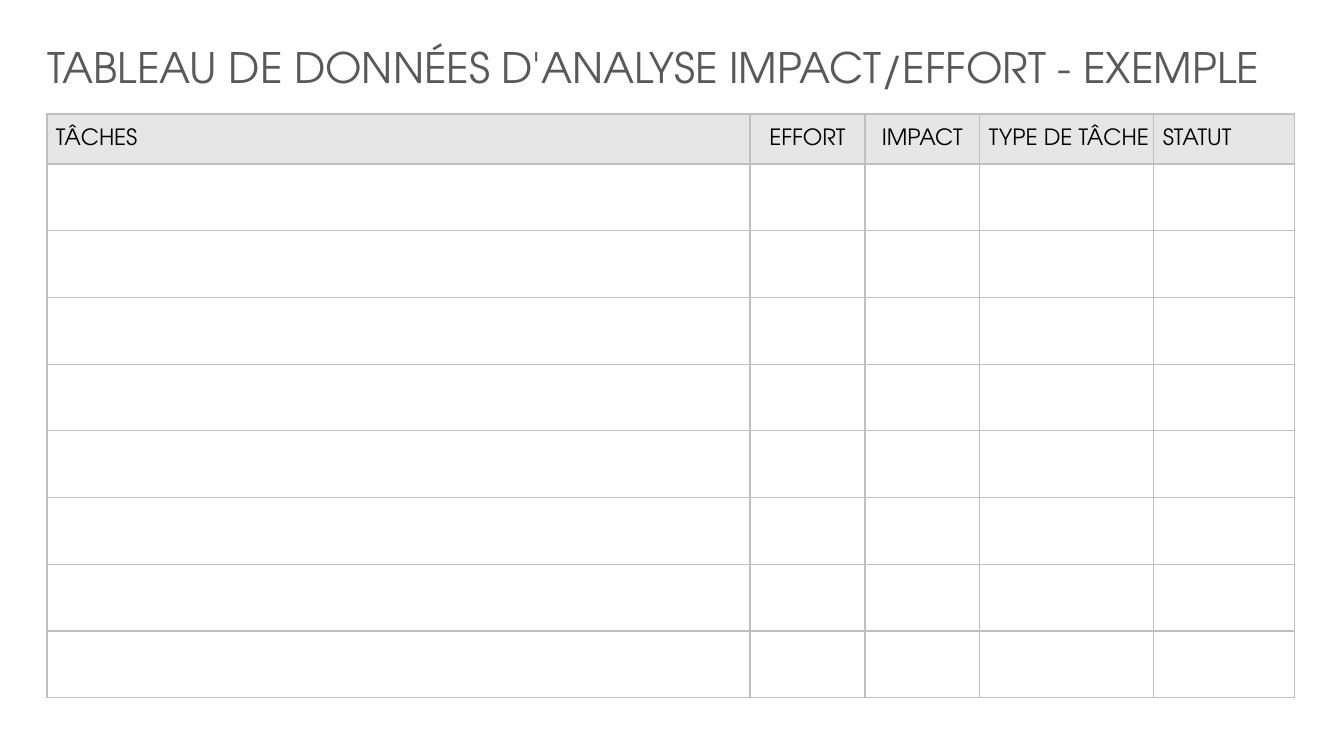
from dataclasses import dataclass

from pptx import Presentation, util as u
from pptx.dml.color import RGBColor
from pptx.enum import text
from pptx.oxml import parse_xml
from pptx.oxml.ns import nsdecls

TITLE = "TABLEAU DE DONNÉES D'ANALYSE IMPACT/EFFORT - EXEMPLE"
# Heading, width in px, centred
COLS = [
    ("TÂCHES", 703, False),
    ("EFFORT", 115, True),
    ("IMPACT", 115, True),
    ("TYPE DE TÂCHE", 174, False),
    ("STATUT", 141, False),
]
TASKS = 8


@dataclass(frozen=True)
class Theme:
    font: str = "TeX Gyre Adventor"
    title: str = "595959"
    ink: str = "000000"
    head: str = "E7E6E6"
    body: str = "FFFFFF"
    rule: str = "BFBFBF"
    big: int = 30
    small: int = 16
    thin: float = 1
    thick: float = 2.25


THEME = Theme()
SCALE = 914400 / 100.8
WIDE, HIGH = 1344, 756
LEFT, TOP, DEPTH, HEAD = 47, 114, 584, 50


def px(n):
    return u.Emu(round(n * SCALE))


def style(para, size, color, align):
    para.alignment = align
    font = para.font
    font.name, font.size = THEME.font, u.Pt(size)
    font.color.rgb = RGBColor.from_string(color)


def border(cell, top):
    """Rule all four sides; must run before the cell gets its fill."""
    props = cell._tc.get_or_add_tcPr()
    for side in "LRTB":
        width = u.Pt(top if side == "T" else THEME.thin)
        props.append(parse_xml(
            f'<a:ln{side} {nsdecls("a")} w="{width}"><a:solidFill>'
            f'<a:srgbClr val="{THEME.rule}"/></a:solidFill></a:ln{side}>'))


def paint(cell, color):
    cell.fill.solid()
    cell.fill.fore_color.rgb = RGBColor.from_string(color)


def add_title(slide):
    box = slide.shapes.title
    box.left, box.top, box.width, box.height = px(37), px(36), px(1293), px(61)
    frame = box.text_frame
    frame.text = TITLE
    frame.word_wrap = True
    frame.auto_size = text.MSO_AUTO_SIZE.NONE
    frame.vertical_anchor = text.MSO_ANCHOR.TOP
    style(frame.paragraphs[0], THEME.big, THEME.title, text.PP_ALIGN.LEFT)


def add_grid(slide):
    width = sum(col[1] for col in COLS)
    grid = slide.shapes.add_table(
        TASKS + 1, len(COLS), px(LEFT), px(TOP), px(width), px(DEPTH)).table
    grid.first_row = grid.horz_banding = False
    for r, row in enumerate(grid.rows):
        row.height = px((DEPTH - HEAD) / TASKS if r else HEAD)
        for cell in row.cells:
            border(cell, THEME.thin if r else THEME.thick)
            paint(cell, THEME.body if r else THEME.head)
    for c, (name, wide, mid) in enumerate(COLS):
        grid.columns[c].width = px(wide)
        cell = grid.cell(0, c)
        cell.text = name
        cell.vertical_anchor = text.MSO_ANCHOR.MIDDLE
        cell.margin_left = px(1 if mid else 9)
        cell.margin_right = cell.margin_top = px(1)
        cell.margin_bottom = 0
        align = text.PP_ALIGN.CENTER if mid else text.PP_ALIGN.LEFT
        style(cell.text_frame.paragraphs[0], THEME.small, THEME.ink, align)


def main():
    deck = Presentation()
    deck.slide_width, deck.slide_height = px(WIDE), px(HIGH)
    slide = deck.slides.add_slide(deck.slide_layouts.get_by_name("Title Only"))
    add_grid(slide)
    add_title(slide)
    deck.save("out.pptx")


if __name__ == "__main__":
    main()
